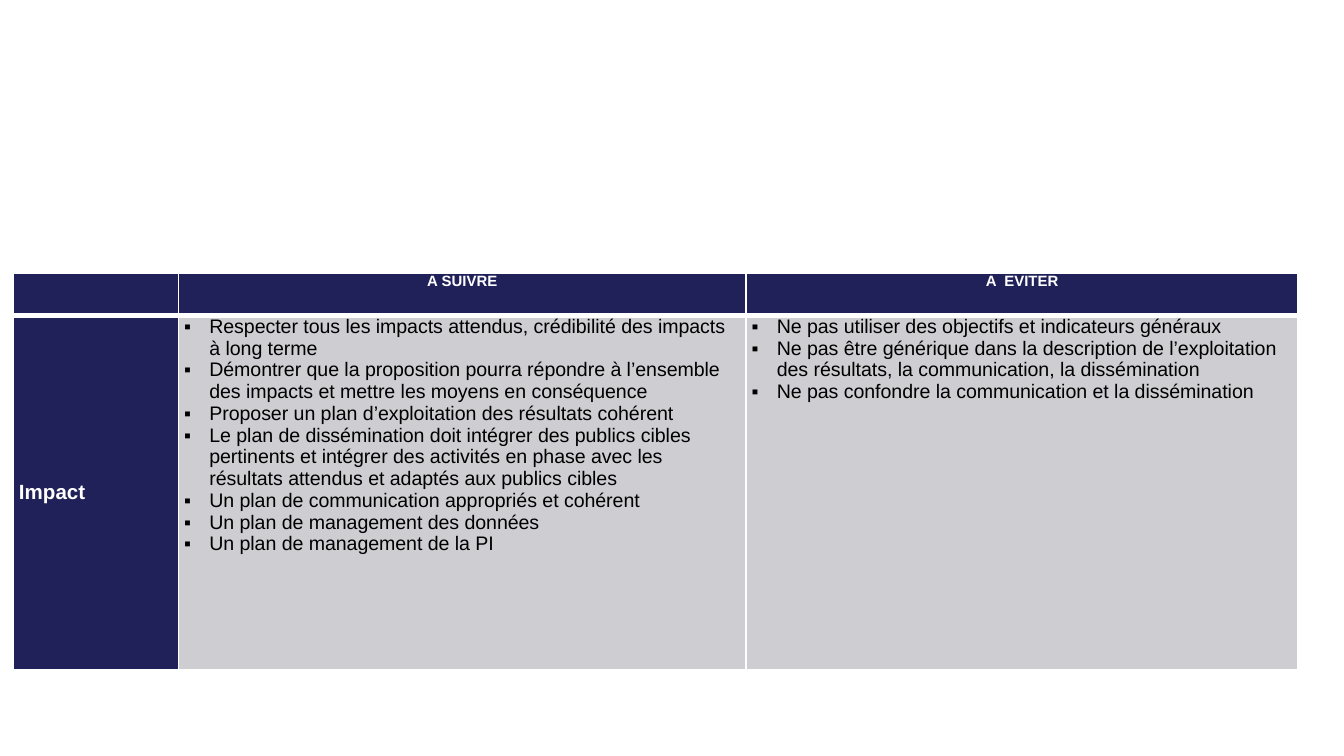
from lxml import etree
from pptx import Presentation
from pptx.dml.color import RGBColor
from pptx.enum.text import MSO_ANCHOR, PP_ALIGN
from pptx.oxml.ns import qn
from pptx.util import Pt

TOP, MIDDLE = MSO_ANCHOR.TOP, MSO_ANCHOR.MIDDLE
LEFT, CENTER = PP_ALIGN.LEFT, PP_ALIGN.CENTER
NAVY, GREY, WHITE, BLACK = "21215A", "CDCDD2", "FFFFFF", "000000"
FONT = "Arial"
INDENT = 13.5
THIN, THICK = 1, 3

HEADINGS = ["", "A SUIVRE", "A  EVITER"]
CRITERION = "Impact"
TO_FOLLOW = [
    "Respecter tous les impacts attendus, crédibilité des impacts à long terme",
    "Démontrer que la proposition pourra répondre à l’ensemble des impacts et mettre les moyens en conséquence",
    "Proposer un plan d’exploitation des résultats cohérent",
    "Le plan de dissémination doit intégrer des publics cibles pertinents et intégrer des activités "
    "en phase avec les résultats attendus et adaptés aux publics cibles",
    "Un plan de communication appropriés et cohérent",
    "Un plan de management des données",
    "Un plan de management de la PI",
]
TO_AVOID = [
    "Ne pas utiliser des objectifs et indicateurs généraux",
    "Ne pas être générique dans la description de l’exploitation des résultats, la communication, la dissémination",
    "Ne pas confondre la communication et la dissémination",
]


def color(hex_value):
    return RGBColor.from_string(hex_value)


def add_bullet(paragraph):
    properties = paragraph._p.get_or_add_pPr()
    properties.set("marL", str(Pt(INDENT)))
    properties.set("indent", str(-Pt(INDENT)))
    etree.SubElement(properties, qn("a:buFont")).set("typeface", FONT)
    etree.SubElement(properties, qn("a:buChar")).set("char", "▪")


def write(frame, lines, size, ink=WHITE, bold=True, align=LEFT, bullets=False):
    for index, line in enumerate(lines):
        paragraph = frame.add_paragraph() if index else frame.paragraphs[0]
        if bullets:
            add_bullet(paragraph)
        paragraph.alignment = align
        paragraph.font.size = Pt(size)
        if line:
            run = paragraph.add_run()
            run.text = line
            run.font.name = FONT
            run.font.size = Pt(size)
            run.font.bold = bold
            run.font.color.rgb = color(ink)


def style_cell(cell, fill, top, bottom, anchor=TOP):
    cell.margin_left = cell.margin_right = Pt(3)
    cell.margin_top = cell.margin_bottom = 0
    cell.vertical_anchor = anchor
    properties = cell._tc.get_or_add_tcPr()
    edges = [("a:lnL", THIN), ("a:lnR", THIN), ("a:lnT", top), ("a:lnB", bottom)]
    for edge, width in edges:
        border = etree.SubElement(properties, qn(edge), w=str(Pt(width)))
        solid = etree.SubElement(border, qn("a:solidFill"))
        etree.SubElement(solid, qn("a:srgbClr"), val=WHITE)
    cell.fill.solid()
    cell.fill.fore_color.rgb = color(fill)


def add_advice_table(slide, left, top, width, height):
    table = slide.shapes.add_table(2, 3, Pt(left), Pt(top), Pt(width), Pt(height)).table
    criterion_width, follow_width, header_height = 88.5, 304, 23
    widths = [criterion_width, follow_width, width - criterion_width - follow_width]
    for column, column_width in zip(table.columns, widths):
        column.width = Pt(column_width)
    for row, row_height in zip(table.rows, [header_height, height - header_height]):
        row.height = Pt(row_height)

    for index, heading in enumerate(HEADINGS):
        header = table.cell(0, index)
        style_cell(header, NAVY, THIN, THICK)
        write(header.text_frame, [heading], 8, align=CENTER)

    criterion = table.cell(1, 0)
    style_cell(criterion, NAVY, THICK, THIN, anchor=MIDDLE)
    write(criterion.text_frame, [CRITERION], 11)

    for index, advice in enumerate([TO_FOLLOW, TO_AVOID], start=1):
        cell = table.cell(1, index)
        style_cell(cell, GREY, THICK, THIN)
        write(cell.text_frame, advice, 10.5, ink=BLACK, bold=False, bullets=True)


def main():
    presentation = Presentation()
    presentation.slide_width, presentation.slide_height = Pt(720), Pt(405)
    slide = presentation.slides.add_slide(presentation.slide_layouts[6])
    add_advice_table(slide, 7.2, 146.2, 688.3, 212.4)
    presentation.save("out.pptx")


if __name__ == "__main__":
    main()
